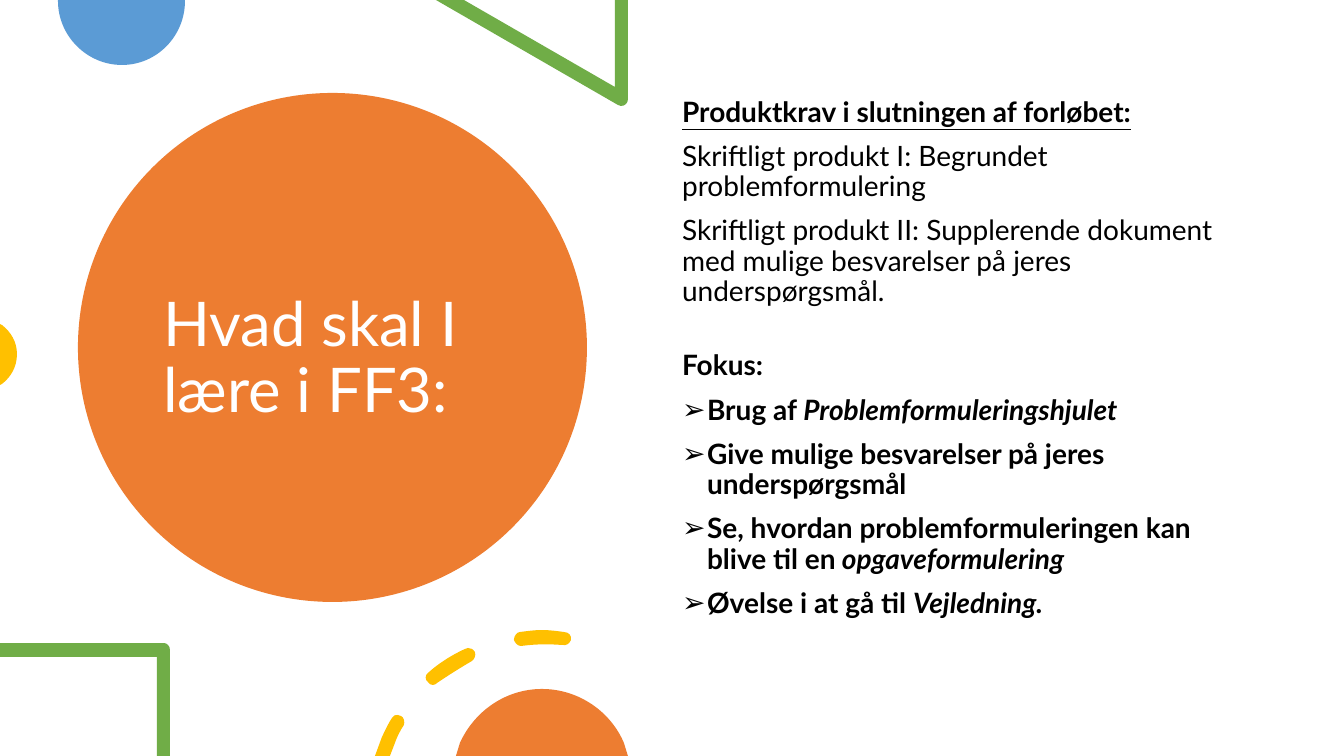
import copy

import pptx
import pptx.dml.color
import pptx.enum.shapes
import pptx.enum.text
import pptx.oxml.ns
import pptx.util
from lxml import etree

PX = 12192000 / 1344  # EMU per pixel
FONT = "Lato"
ORANGE = pptx.dml.color.RGBColor(0xED, 0x7D, 0x31)
BLUE = pptx.dml.color.RGBColor(0x5B, 0x9B, 0xD5)
GREEN = pptx.dml.color.RGBColor(0x70, 0xAD, 0x47)
YELLOW = pptx.dml.color.RGBColor(0xFF, 0xC0, 0x00)
WHITE = pptx.dml.color.RGBColor(0xFF, 0xFF, 0xFF)
BLACK = pptx.dml.color.RGBColor(0x00, 0x00, 0x00)


def paint(shape, color):
    """Plain fill without line or shadow."""
    shape.shadow.inherit = False
    shape.fill.solid()
    shape.fill.fore_color.rgb = color
    shape.line.fill.background()


def add_outline(page, contours, color):
    """Closed contours: two numbers are a line to a point, six a Bezier curve."""
    builder = page.shapes.build_freeform(*(n * PX for n in contours[0][0]))
    for number, (start, *steps) in enumerate(contours):
        if number:
            builder.move_to(*(n * PX for n in start))
        points = [(step[i] * PX, step[i + 1] * PX)
                  for step in steps for i in range(0, len(step), 2)]
        builder.add_line_segments(points, close=True)
    shape = builder.convert_to_shape()
    paint(shape, color)

    # Join each three points of a curve into one Bezier segment
    outline = next(shape.element.iter(pptx.oxml.ns.qn("a:path")))
    lines = iter(outline.findall(pptx.oxml.ns.qn("a:lnTo")))
    for contour in contours:
        for step in contour[1:]:
            group = [next(lines) for _ in range(len(step) // 2)]
            if len(group) == 3:
                curve = etree.Element(pptx.oxml.ns.qn("a:cubicBezTo"))
                group[0].addprevious(curve)
                for line in group:
                    curve.append(line[0])
                    outline.remove(line)


deck = pptx.Presentation()
deck.slide_width = round(1344 * PX)
deck.slide_height = round(756 * PX)
page = deck.slides.add_slide(deck.slide_layouts[1])
title = page.shapes.title
body = page.placeholders[1]

# Large circle with the title on top
circle = page.shapes.add_shape(
    pptx.enum.shapes.MSO_SHAPE.OVAL,
    *(round(n * PX) for n in (78, 93, 509, 509)))
paint(circle, ORANGE)
page.shapes.element.append(title.element)

# Decorations at the top and left edges
add_outline(page, [[(185, 0), (58, 0), (58, 1), (58, 36, 87, 65, 122, 65),
                    (157, 65, 185, 36, 185, 1)]], BLUE)
add_outline(page, [[(628, 0), (615, 0), (615, 87), (464, 0), (436, 0), (618, 105),
                    (619, 106, 620, 106, 621, 106),
                    (625, 106, 628, 103, 628, 99)]], GREEN)
add_outline(page, [[(0, 324), (0, 385), (2, 384), (11, 377, 17, 367, 17, 354),
                    (17, 342, 11, 332, 2, 325)]], YELLOW)
page.shapes.element.append(body.element)

# Decorations at the bottom edge: square, dashed ring, circle
add_outline(page, [[(164, 643), (0, 643), (0, 657), (157, 657), (157, 756), (170, 756),
                    (170, 650), (170, 646, 167, 643, 164, 643)]], GREEN)
add_outline(page, [
    [(398, 715), (396, 714, 393, 716, 392, 718), (388, 724, 385, 731, 382, 737),
     (375, 756), (390, 756), (395, 743), (397, 737, 400, 731, 404, 725),
     (405, 722, 404, 717, 401, 716), (400, 715, 399, 715, 398, 715)],
    [(468, 648), (467, 648, 466, 648, 465, 649), (452, 655, 439, 663, 428, 673),
     (425, 675, 425, 680, 428, 682), (429, 684, 431, 685, 433, 685),
     (435, 685, 436, 684, 437, 683), (449, 675, 460, 668, 472, 661),
     (475, 659, 476, 655, 475, 652), (473, 649, 471, 648, 468, 648)],
    [(542, 630), (535, 630, 528, 631, 520, 632), (517, 632, 514, 636, 514, 640),
     (515, 643, 518, 646, 521, 646), (536, 644, 549, 644, 562, 645),
     (567, 646, 570, 643, 571, 640), (572, 636, 569, 632, 564, 632),
     (557, 631, 549, 630, 542, 630)],
], YELLOW)
add_outline(page, [[(542, 689), (505, 689, 474, 712, 460, 743), (456, 756), (628, 756),
                    (624, 743), (611, 712, 579, 689, 542, 689)]], ORANGE)

# Title and body frames
for box, frame, anchor in [
    (title, (153, 135, 357, 449), pptx.enum.text.MSO_ANCHOR.MIDDLE),
    (body, (672, 93, 580, 600), pptx.enum.text.MSO_ANCHOR.TOP),
]:
    box.left, box.top, box.width, box.height = (round(n * PX) for n in frame)
    box.text_frame.word_wrap = True
    box.text_frame.auto_size = pptx.enum.text.MSO_AUTO_SIZE.NONE
    box.text_frame.vertical_anchor = anchor

title.text_frame.text = "Hvad skal I lære i FF3:"
para = title.text_frame.paragraphs[0]
para.alignment = pptx.enum.text.PP_ALIGN.LEFT
para.line_spacing = 0.9
para.space_before = pptx.util.Pt(0)
para.runs[0].font.size = pptx.util.Pt(44)
para.runs[0].font.name = FONT
para.runs[0].font.color.rgb = WHITE

# Body: text, italic ending, style
lines = [
    ("Produktkrav i slutningen af forløbet:", "", "heading"),
    ("Skriftligt produkt I: Begrundet problemformulering", "", "plain"),
    ("Skriftligt produkt II: Supplerende dokument med mulige besvarelser "
     "på jeres underspørgsmål.", "", "plain"),
    ("\vFokus:", "", "focus"),
    ("Brug af", " Problemformuleringshjulet", "bullet"),
    ("Give mulige besvarelser på jeres underspørgsmål", "", "bullet"),
    ("Se, hvordan problemformuleringen kan blive til en", " opgaveformulering", "bullet"),
    ("Øvelse i at gå til ", "Vejledning.", "bullet"),
]
for number, (text, ending, style) in enumerate(lines):
    para = body.text_frame.paragraphs[0] if number == 0 else body.text_frame.add_paragraph()
    para.text = text
    if ending:
        span = para.add_run()
        span.text = ending
        span.font.italic = True
    para.line_spacing = 0.9
    para.space_before = pptx.util.Pt(10)
    for span in para.runs:
        span.font.size = pptx.util.Pt(20)
        span.font.name = FONT
        span.font.color.rgb = BLACK
        span.font.bold = style != "plain"
        span.font.underline = style == "heading"

    # A line break takes the size and font of its paragraph
    for line_break in para._p.findall(pptx.oxml.ns.qn("a:br")):
        line_break.append(copy.deepcopy(para.runs[0]._r.rPr))

    # Bullet and hanging indent
    properties = para._p.get_or_add_pPr()
    indent = round(25 * PX) if style == "bullet" else 0
    properties.set("marL", str(indent))
    properties.set("indent", str(-indent))
    if style == "bullet":
        bullet = etree.SubElement(properties, pptx.oxml.ns.qn("a:buChar"))
        bullet.set("char", "➢")
    else:
        etree.SubElement(properties, pptx.oxml.ns.qn("a:buNone"))

deck.save("out.pptx")
